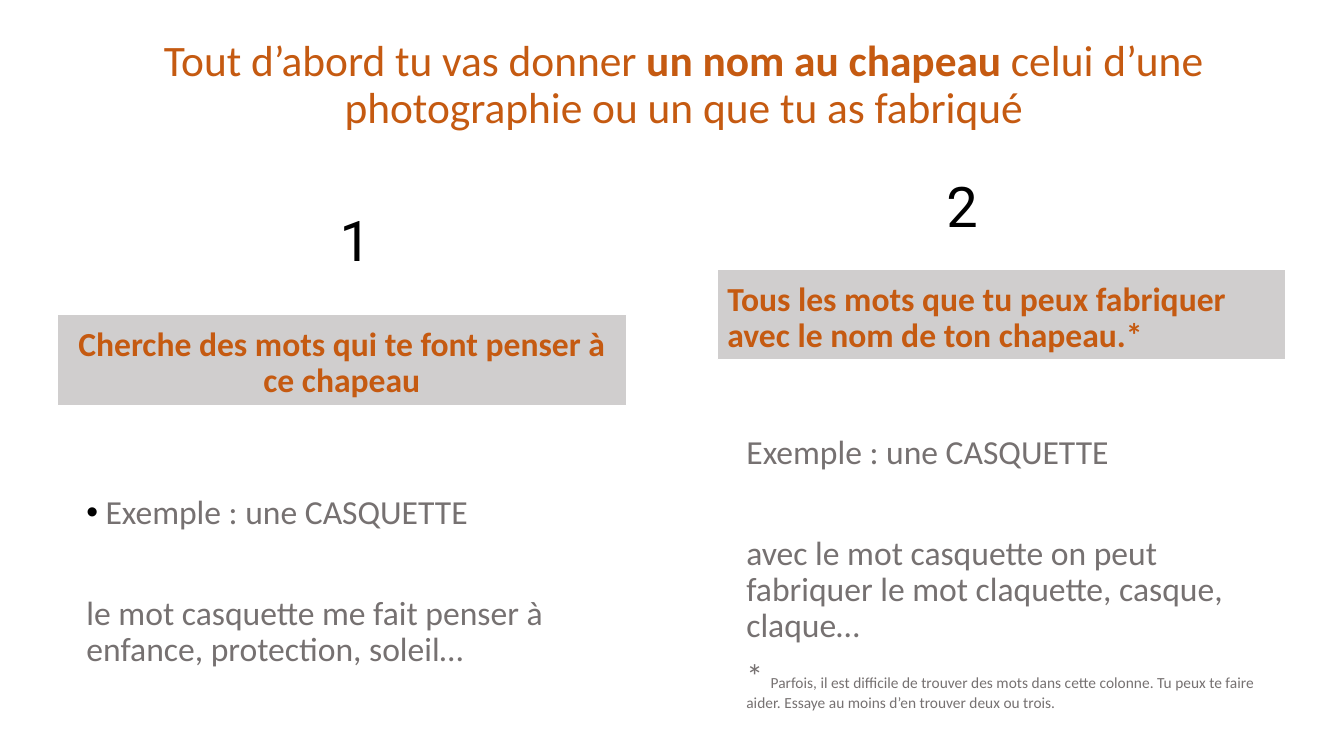
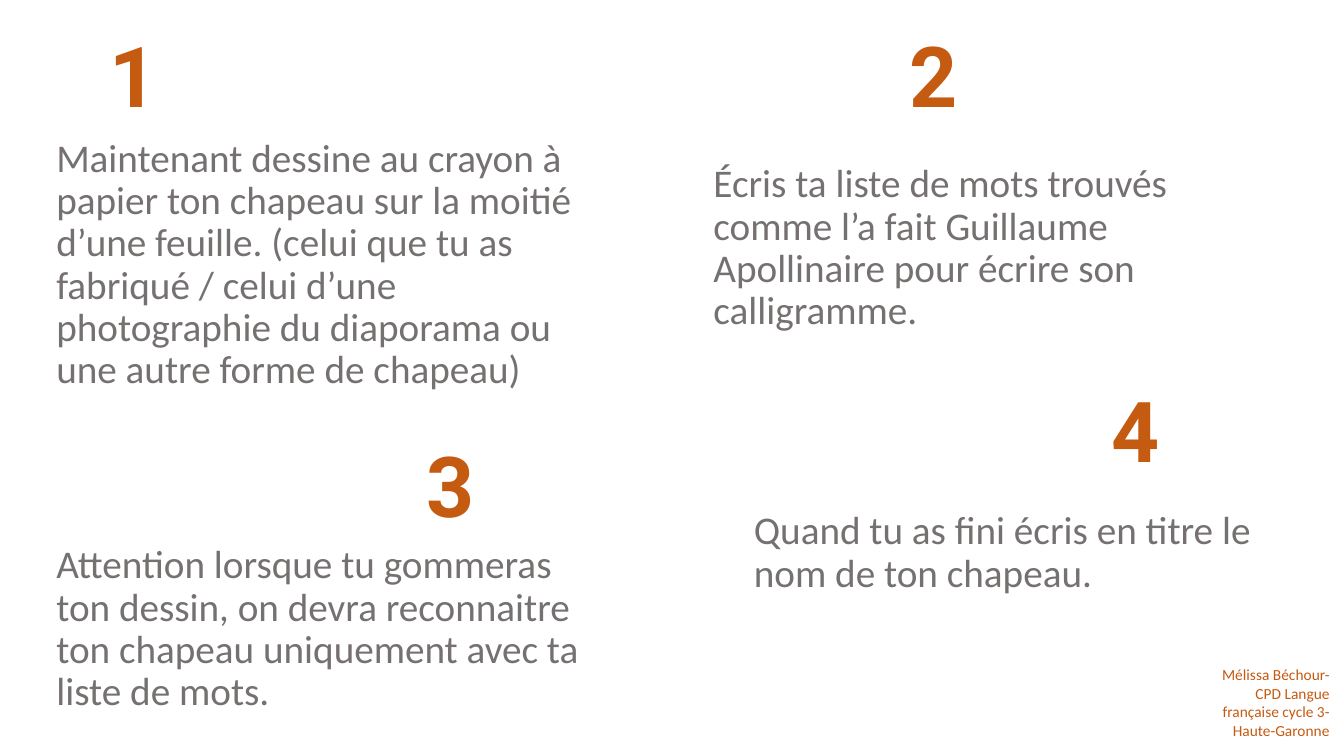
from lxml import etree
from pptx import Presentation
from pptx.dml.color import RGBColor
from pptx.enum.shapes import MSO_SHAPE
from pptx.enum.text import MSO_ANCHOR, PP_ALIGN
from pptx.oxml.ns import qn
from pptx.util import Cm, Pt

RECTANGLE = MSO_SHAPE.RECTANGLE
TOP, MIDDLE, BOTTOM = MSO_ANCHOR.TOP, MSO_ANCHOR.MIDDLE, MSO_ANCHOR.BOTTOM
LEFT, CENTER, RIGHT = PP_ALIGN.LEFT, PP_ALIGN.CENTER, PP_ALIGN.RIGHT

ORANGE, GREY, SILVER = "C55A11", "767171", "D0CECE"
BLACK, WHITE = "000000", "FFFFFF"

TITLE = {"size": Pt(31), "name": "Calibri", "color": ORANGE}
HEADING = {"size": Pt(24), "name": "Calibri", "color": ORANGE, "bold": True}
EXAMPLE = {"size": Pt(24), "name": "Calibri", "color": GREY}
INSTRUCTION = {"size": Pt(28), "name": "Calibri", "color": GREY}
COLUMN_NUMBER = {"size": Pt(40), "name": "Roboto", "color": BLACK}
STEP_NUMBER = {"size": Pt(60), "name": "Roboto", "color": ORANGE, "bold": True}
CREDIT = {"size": Pt(11), "name": "Calibri", "color": ORANGE}

TIGHT = {"line_spacing": 0.9}
COLUMN_WIDTH = 14.33
EXAMPLE_INDENT = 0.48


def rgb(value):
    return RGBColor.from_string(value)


def apply_format(target, values):
    for key, value in values.items():
        if key == "color":
            target.color.rgb = rgb(value)
        else:
            setattr(target, key, value)


def write(frame, paragraphs, font, layout, anchor):
    frame.word_wrap = True
    frame.vertical_anchor = anchor
    for index, runs in enumerate(paragraphs):
        paragraph = frame.add_paragraph() if index else frame.paragraphs[0]
        apply_format(paragraph, {"alignment": LEFT, **layout})
        for words, changes in runs:
            run = paragraph.add_run()
            run.text = words
            apply_format(run.font, {**font, **changes})
    return frame


def plain(*texts):
    return [[(text, {})] for text in texts]


def add_text(slide, box, paragraphs, font, layout=None, anchor=TOP):
    area = slide.shapes.add_textbox(*map(Cm, box))
    return write(area.text_frame, paragraphs, font, layout or {}, anchor)


def add_panel(slide, box, text, font, layout, anchor=TOP, fill=None):
    panel = slide.shapes.add_shape(RECTANGLE, *map(Cm, box))
    panel.shadow.inherit = False
    if fill:
        panel.fill.solid()
        panel.fill.fore_color.rgb = rgb(fill)
    else:
        panel.fill.background()
    panel.line.color.rgb = rgb(WHITE)
    panel.line.width = Pt(0.75)
    write(panel.text_frame, plain(text), font, layout, anchor)


def indent(paragraph, margin, first_line=0):
    properties = paragraph._p.get_or_add_pPr()
    properties.set("marL", str(Cm(margin)))
    properties.set("indent", str(Cm(first_line)))
    return properties


def add_bullet(paragraph):
    properties = indent(paragraph, 2 * EXAMPLE_INDENT, -EXAMPLE_INDENT)
    color = etree.SubElement(properties, qn("a:buClr"))
    etree.SubElement(color, qn("a:srgbClr"), val=BLACK)
    etree.SubElement(properties, qn("a:buFont"), typeface="Arial")
    etree.SubElement(properties, qn("a:buChar"), char="•")


def add_example(slide, box, paragraphs):
    frame = add_text(slide, box, paragraphs, EXAMPLE, TIGHT)
    for paragraph, gap in zip(frame.paragraphs, (0, 46, 10)):
        paragraph.space_before = Pt(gap)
        indent(paragraph, EXAMPLE_INDENT)
    return frame


def build_word_search(slide):
    add_text(slide, (1.45, 0.84, 31.55, 2.64), [[
        ("Tout d’abord tu vas donner ", {}),
        ("un nom au chapeau ", {"bold": True}),
        ("celui d’une photographie ou un que tu as fabriqué", {}),
    ]], TITLE, {**TIGHT, "alignment": CENTER}, MIDDLE)

    columns = (
        ("1", 8.31, 5.05, 1.45, 7.92, CENTER,
         "Cherche des mots qui te font penser à ce chapeau"),
        ("2", 23.6, 4.19, 18.08, 6.78, LEFT,
         "Tous les mots que tu peux fabriquer avec le nom de ton chapeau.*"),
    )
    for number, number_x, number_y, x, y, alignment, heading in columns:
        add_text(slide, (number_x, number_y, 1.65, 1.96), plain(number), COLUMN_NUMBER)
        add_panel(slide, (x, y, COLUMN_WIDTH, 2.29), heading, HEADING,
                  {**TIGHT, "alignment": alignment}, BOTTOM, SILVER)

    associations = add_example(slide, (1.45, 12.36, COLUMN_WIDTH, 5.84), plain(
        "Exemple : une CASQUETTE",
        "le mot casquette me fait penser à enfance, protection, soleil…",
    ))
    add_bullet(associations.paragraphs[0])

    footnote = [
        ("* ", {}),
        ("Parfois, il est difficile de trouver des mots dans cette colonne. "
         "Tu peux te faire aider. Essaye au moins d’en trouver deux ou trois.",
         {"size": Pt(11)}),
    ]
    add_example(slide, (18.08, 10.85, COLUMN_WIDTH, 7.29), plain(
        "Exemple : une CASQUETTE",
        "avec le mot casquette on peut fabriquer le mot claquette, casque, claque…",
    ) + [footnote])


def build_drawing_steps(slide):
    steps = (
        ("1", 2.51, 0.46, (1.17, 3.28, COLUMN_WIDTH, 6.73), BOTTOM,
         "Maintenant dessine au crayon à papier ton chapeau sur la moitié d’une "
         "feuille. (celui que tu as fabriqué / celui d’une photographie du "
         "diaporama ou une autre forme de chapeau)"),
        ("2", 22.68, 0.46, (17.73, 4.01, COLUMN_WIDTH, 4.57), TOP,
         "Écris ta liste de mots trouvés comme l’a fait Guillaume Apollinaire "
         "pour écrire son calligramme."),
        ("3", 10.49, 10.8, (1.17, 13.61, 14.4, 4.57), TOP,
         "Attention lorsque tu gommeras ton dessin, on devra reconnaitre ton "
         "chapeau uniquement avec ta liste de mots."),
        ("4", 27.76, 9.42, (18.75, 12.75, 14.4, 2.41), TOP,
         "Quand tu as fini écris en titre le nom de ton chapeau."),
    )
    for number, x, y, box, anchor, instruction in steps:
        add_panel(slide, box, instruction, INSTRUCTION, TIGHT, anchor)
        add_text(slide, (x, y, 2.24, 2.82), plain(number), STEP_NUMBER)

    add_text(slide, (30.43, 16.64, 3.33, 2.13), plain(
        "Mélissa Béchour-CPD Langue française cycle 3-",
        "Haute-Garonne",
    ), CREDIT, {"alignment": RIGHT})


def main():
    presentation = Presentation()
    presentation.slide_width = Cm(33.87)
    presentation.slide_height = Cm(19.05)
    blank = presentation.slide_layouts[6]
    for build in (build_word_search, build_drawing_steps):
        build(presentation.slides.add_slide(blank))
    presentation.save("out.pptx")


if __name__ == "__main__":
    main()
